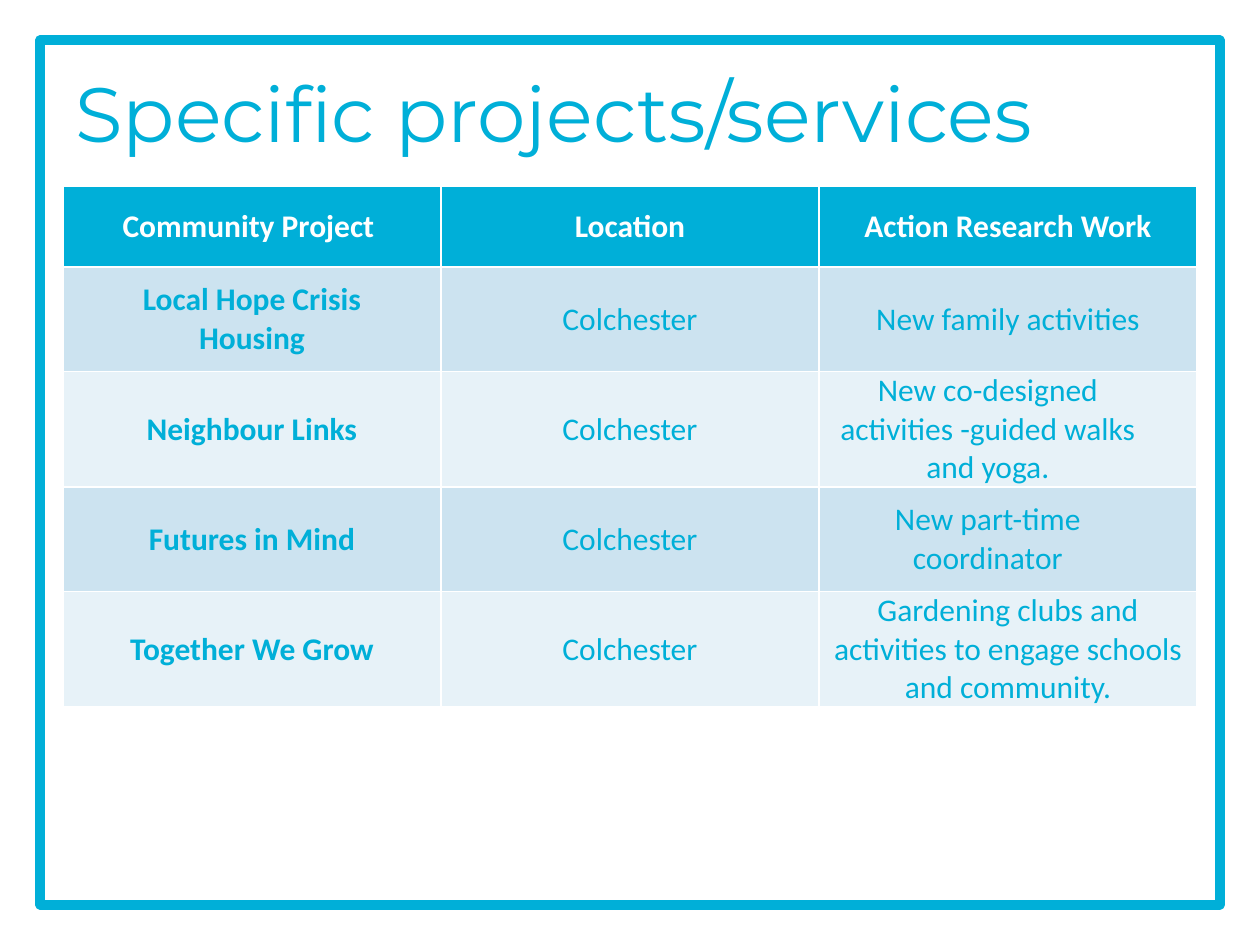
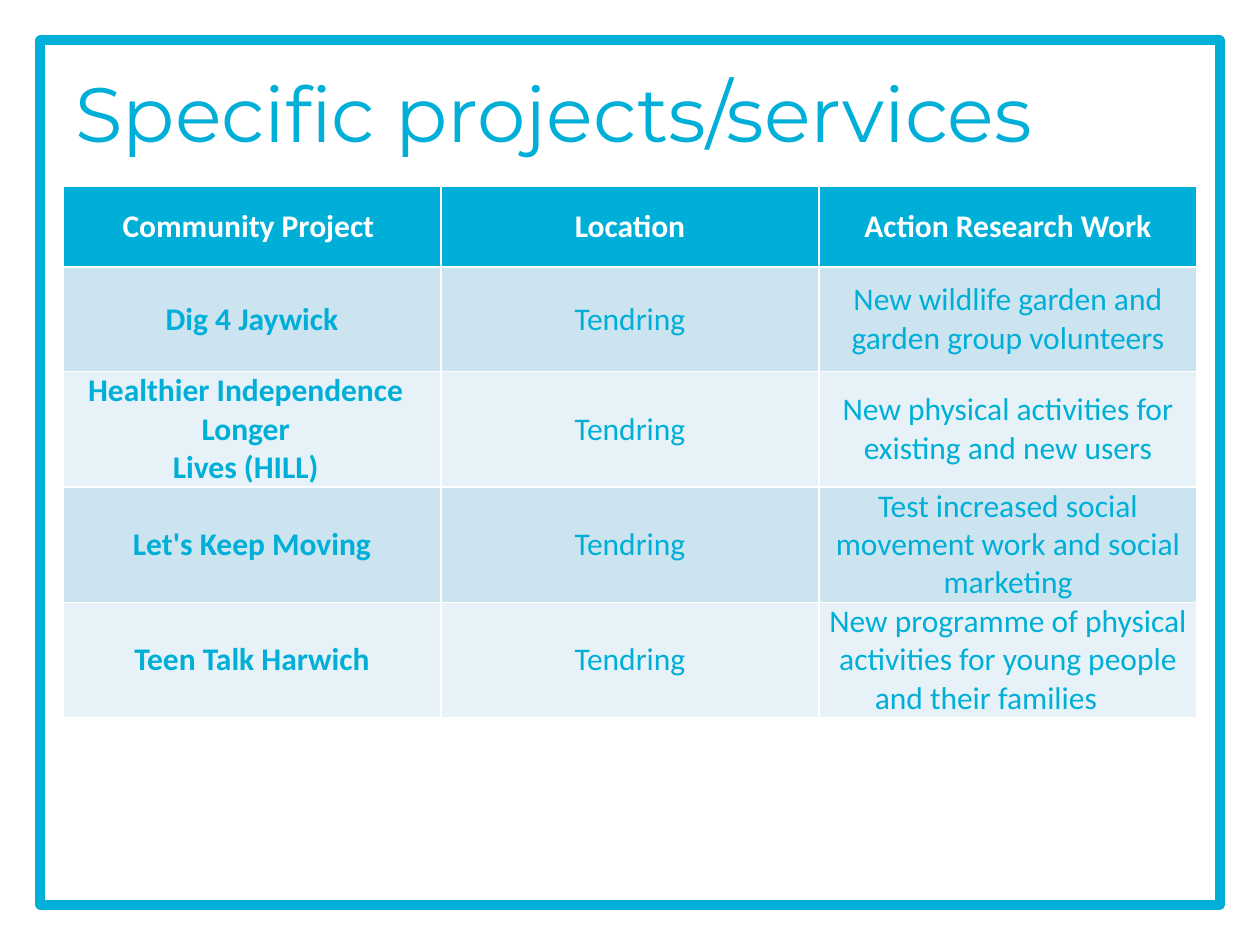
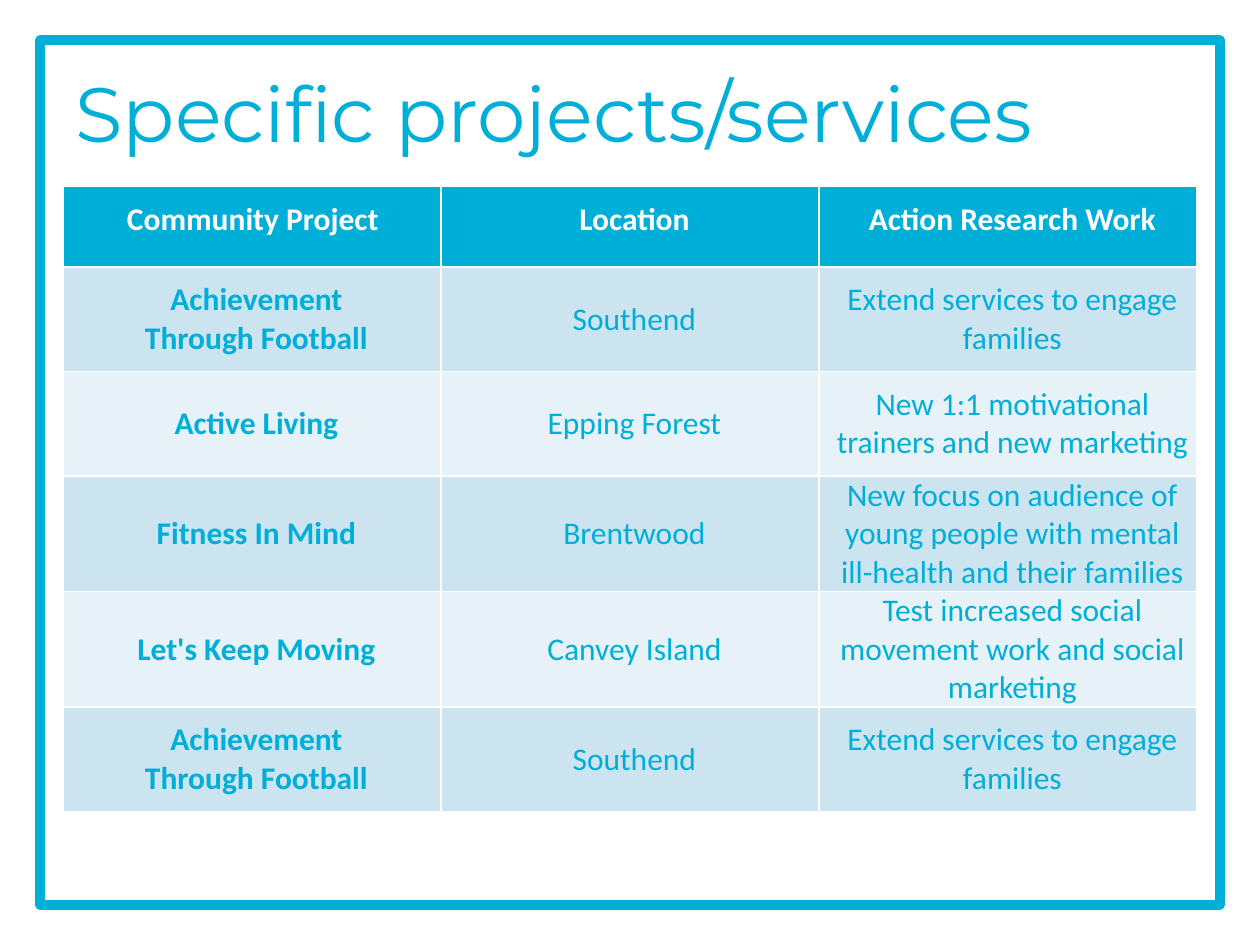
from pptx import Presentation
from pptx.dml.color import RGBColor
from pptx.enum.shapes import MSO_SHAPE
from pptx.enum.text import MSO_ANCHOR, MSO_AUTO_SIZE, PP_ALIGN
from pptx.util import Inches, Pt

RECTANGLE = MSO_SHAPE.RECTANGLE
MIDDLE = MSO_ANCHOR.MIDDLE
CENTER, LEFT = PP_ALIGN.CENTER, PP_ALIGN.LEFT
NO_AUTOFIT = MSO_AUTO_SIZE.NONE

# Content: one list of projects per slide; "\n" starts a new paragraph
TITLE = "Specific projects/services"
HEADINGS = ("Community Project ", "Location", "Action Research Work")
FOOTBALL = ("Achievement\nThrough Football", "Southend",
            "Extend services to engage families")
SOCIAL_MOVEMENT = "Test increased social movement work and social\nmarketing"

COLCHESTER = [
    ("Local Hope Crisis\nHousing", "Colchester", "New family activities"),
    ("Neighbour Links", "Colchester",
     "New co-designed activities -guided walks and yoga."),
    ("Futures in Mind", "Colchester", "New part-time coordinator"),
    ("Together We Grow", "Colchester",
     "Gardening clubs and activities to engage schools and community."),
]
TENDRING = [
    ("Dig 4 Jaywick", "Tendring",
     "New wildlife garden and garden group volunteers"),
    ("Healthier Independence Longer\nLives (HILL)", "Tendring",
     "New physical activities for existing and new users"),
    ("Let's Keep Moving", "Tendring", SOCIAL_MOVEMENT),
    ("Teen Talk Harwich", "Tendring",
     "New programme of physical activities for young people\nand their families"),
]
OTHER_DISTRICTS = [
    FOOTBALL,
    ("Active Living", "Epping Forest",
     "New 1:1 motivational trainers and new marketing"),
    ("Fitness In Mind", "Brentwood",
     "New focus on audience of young people with mental\n"
     "ill-health and their families"),
    ("Let's Keep Moving", "Canvey Island", SOCIAL_MOVEMENT),
    FOOTBALL,
]

# Projects, left indent of the cells (inches), heading line spacing (points)
SLIDES = [
    (COLCHESTER, 0, None),
    (TENDRING, 0, None),
    (OTHER_DISTRICTS, 0.07, 13.7),
]

# Right indents (inches) of single paragraphs
RIGHT_INDENTS = {
    "New co-designed activities -guided walks and yoga.": 0.32,
    "New part-time coordinator": 0.32,
    "Healthier Independence Longer": 0.1,
    "Lives (HILL)": 0.1,
    "and their families": 0.35,
}

# Shared look
CYAN, WHITE = "00AFD8", "FFFFFF"
BANDS = ("CCE3F0", "E7F2F8")
WIDTH, HEIGHT = 10, 7.5
FRAME_MARGIN, SIDE_MARGIN = 0.32, 0.5
CONTENT_WIDTH = WIDTH - 2 * SIDE_MARGIN
TITLE_TOP, TITLE_HEIGHT = 0.45, 0.87
TABLE_TOP, HEADING_HEIGHT, ROW_HEIGHT = 1.48, 0.64, 0.83


def color(hex_string):
    return RGBColor.from_string(hex_string)


def style_font(font, name, size, hex_string, bold=False):
    font.name, font.size, font.bold = name, Pt(size), bold
    font.color.rgb = color(hex_string)


def prepare_layout(layout, slide):
    """Place the title and put the frame behind it on the shared layout."""
    title = layout.placeholders[0]
    title.left, title.top = Inches(SIDE_MARGIN), Inches(TITLE_TOP)
    title.width, title.height = Inches(CONTENT_WIDTH), Inches(TITLE_HEIGHT)

    frame = slide.shapes.add_shape(
        RECTANGLE, Inches(FRAME_MARGIN), Inches(FRAME_MARGIN),
        Inches(WIDTH - 2 * FRAME_MARGIN), Inches(HEIGHT - 2 * FRAME_MARGIN))
    frame.shadow.inherit = False
    frame.fill.background()
    frame.line.color.rgb = color(CYAN)
    frame.line.width = Pt(5.67)
    layout.shapes.element.insert(2, frame._element)


def add_title(slide):
    text_frame = slide.shapes.title.text_frame
    text_frame.text = TITLE
    text_frame.auto_size = NO_AUTOFIT
    text_frame.vertical_anchor = MIDDLE
    paragraph = text_frame.paragraphs[0]
    paragraph.alignment = LEFT
    style_font(paragraph.runs[0].font, "Montserrat", 44, CYAN)


def fill_cell(cell, text, fill, ink, bold, indent, spacing):
    cell.fill.solid()
    cell.fill.fore_color.rgb = color(fill)
    cell.vertical_anchor = MIDDLE
    cell.margin_left = cell.margin_right = 0
    cell.margin_top = cell.margin_bottom = 0
    cell.text_frame.text = text
    for paragraph in cell.text_frame.paragraphs:
        paragraph.alignment = CENTER
        if spacing:
            paragraph.line_spacing = Pt(spacing)
        properties = paragraph._p.get_or_add_pPr()
        properties.set("marL", str(Inches(indent)))
        properties.set("marR", str(Inches(RIGHT_INDENTS.get(paragraph.text, 0))))
        style_font(paragraph.runs[0].font, "Calibri", 18, ink, bold)


def add_projects(slide, projects, indent, heading_spacing):
    rows = [HEADINGS] + projects
    table = slide.shapes.add_table(
        len(rows), len(HEADINGS), Inches(SIDE_MARGIN), Inches(TABLE_TOP),
        Inches(CONTENT_WIDTH),
        Inches(HEADING_HEIGHT + ROW_HEIGHT * len(projects))).table
    for r, row in enumerate(rows):
        heading = r == 0
        table.rows[r].height = Inches(HEADING_HEIGHT if heading else ROW_HEIGHT)
        for c, text in enumerate(row):
            fill_cell(table.cell(r, c), text,
                      fill=CYAN if heading else BANDS[(r - 1) % 2],
                      ink=WHITE if heading else CYAN,
                      bold=heading or c == 0,
                      indent=indent,
                      spacing=heading_spacing if heading else None)


def main():
    deck = Presentation()
    deck.slide_width, deck.slide_height = Inches(WIDTH), Inches(HEIGHT)
    layout = deck.slide_layouts[5]
    for number, (projects, indent, heading_spacing) in enumerate(SLIDES):
        slide = deck.slides.add_slide(layout)
        if number == 0:
            prepare_layout(layout, slide)
        add_title(slide)
        add_projects(slide, projects, indent, heading_spacing)
    deck.save("out.pptx")


if __name__ == "__main__":
    main()
